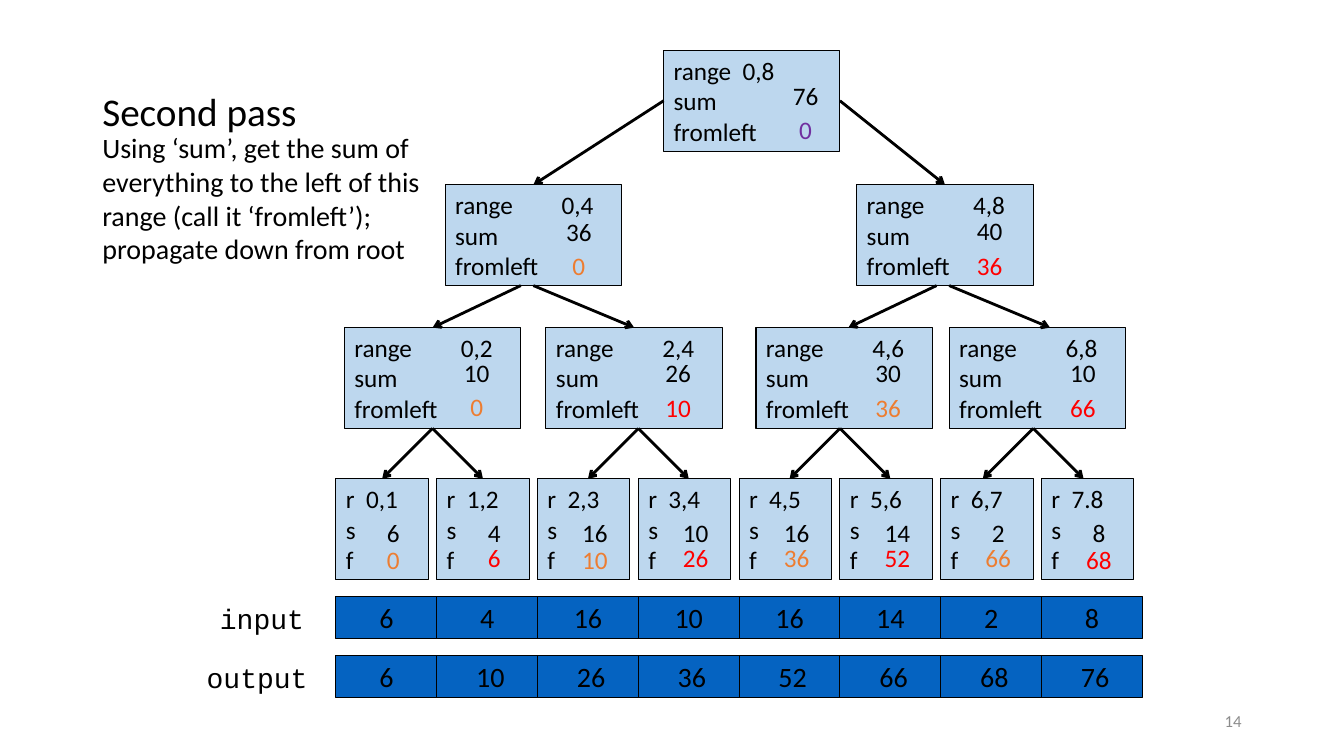
from dataclasses import dataclass

from lxml.etree import SubElement
from pptx import Presentation
from pptx.dml.color import RGBColor
from pptx.enum.shapes import MSO_CONNECTOR, MSO_SHAPE
from pptx.enum.text import MSO_ANCHOR, PP_ALIGN
from pptx.oxml.ns import qn
from pptx.util import Pt

COLORS = {
    "black": "000000", "node": "BDD7EE", "cell": "0563C1", "grey": "8C8C8C",
    "purple": "7030A0", "orange": "ED7D31", "red": "FF0000",
}


@dataclass
class Node:
    left: float
    top: float
    width: float
    lines: tuple[str, str, str]
    value_x: float  # centre of the values, from the left edge
    total: str
    total_top: float
    fromleft: str
    fromleft_top: float
    color: str


@dataclass
class Arrow:
    x1: float
    y1: float
    x2: float
    y2: float


@dataclass
class ArrayRow:
    label: str
    label_left: float
    top: float
    values: list[str]


def rgb(name: str) -> RGBColor:
    return RGBColor.from_string(COLORS[name])


def write(tf, lines, size: float, color: str = "black", font: str = "Calibri",
          align=PP_ALIGN.LEFT, anchor=MSO_ANCHOR.TOP, wrap: bool = False) -> None:
    tf.word_wrap = wrap
    tf.vertical_anchor = anchor
    tf.text = "\n".join(lines)
    for p in tf.paragraphs:
        p.alignment = align
        for r in p.runs:
            r.font.size, r.font.name = Pt(size), font
            r.font.color.rgb = rgb(color)


def add_text(s, left: float, top: float, width: float, height: float,
             text: str, size: float, **style):
    sp = s.shapes.add_textbox(Pt(left), Pt(top), Pt(width), Pt(height))
    write(sp.text_frame, [text], size, **style)
    return sp


def add_box(s, left: float, top: float, width: float, height: float,
            fill: str, lines, size: float, **style) -> None:
    sp = s.shapes.add_shape(MSO_SHAPE.RECTANGLE, Pt(left), Pt(top), Pt(width), Pt(height))
    sp.shadow.inherit = False
    sp.fill.solid()
    sp.fill.fore_color.rgb = rgb(fill)
    sp.line.color.rgb = rgb("black")
    sp.line.width = Pt(0.75)
    write(sp.text_frame, lines, size, **style)


def add_node(s, n: Node) -> None:
    add_box(s, n.left, n.top, n.width, 72, "node", n.lines, 18)
    for text, top, color in ((n.total, n.total_top, "black"),
                             (n.fromleft, n.fromleft_top, n.color)):
        add_text(s, n.left + n.value_x - 18, top, 36, 29, text, 18,
                 color=color, align=PP_ALIGN.CENTER)


def add_arrow(s, a: Arrow) -> None:
    cx = s.shapes.add_connector(MSO_CONNECTOR.STRAIGHT,
                                Pt(a.x1), Pt(a.y1), Pt(a.x2), Pt(a.y2))
    cx.line.color.rgb = rgb("black")
    cx.line.width = Pt(2)
    SubElement(cx.line._get_or_add_ln(), qn("a:tailEnd"), type="arrow")
    SubElement(cx._element.spPr, qn("a:effectLst"))


def add_array(s, row: ArrayRow) -> None:
    add_text(s, row.label_left, row.top, 90, 32, row.label, 20, font="Courier New")
    for i, value in enumerate(row.values):
        add_box(s, 240 + 72 * i, row.top, 72, 30, "cell", [value], 20,
                align=PP_ALIGN.CENTER, anchor=MSO_ANCHOR.MIDDLE)


def inner(left, top, span, value_x, total, total_top, fromleft, fromleft_top, color) -> Node:
    return Node(left, top, 126, (f"range{span}", "sum", "fromleft"), value_x,
                total, total_top, fromleft, fromleft_top, color)


def leaf(i: int, span: str, total: str, fromleft: str, fromleft_top: float) -> Node:
    return Node(240 + 72 * i, 342, 66, (f"r  {span}", "s", "f"), 41, total, 366,
                fromleft, fromleft_top, "red" if i % 2 else "orange")


INNER = [
    inner(474, 36, "  0,8", 101.5, "76", 54, "0", 78, "purple"),
    inner(318, 132, "\t 0,4", 95.5, "36", 151, "0", 175, "orange"),
    inner(612, 132, "\t 4,8", 95, "40", 150, "36", 175, "red"),
    inner(246, 234, "\t 0,2", 94.5, "10", 252, "0", 276, "orange"),
    inner(390, 234, "\t 2,4", 94.5, "26", 252, "10", 277, "red"),
    inner(540, 234, "\t 4,6", 94.5, "30", 252, "36", 277, "orange"),
    inner(678, 234, "\t 6,8", 95.5, "10", 252, "66", 277, "red"),
]
LEAVES = [
    leaf(i, *data) for i, data in enumerate([
        ("0,1", "6", "0", 385), ("1,2", "4", "6", 384),
        ("2,3", "16", "10", 385), ("3,4", "10", "26", 384),
        ("4,5", "16", "36", 384), ("5,6", "14", "52", 384),
        ("6,7", "2", "66", 384), ("7.8", "8", "68", 385),
    ])
]
ARROWS = [
    Arrow(474, 72, 381, 132), Arrow(600, 72, 675, 132),
    Arrow(372, 204, 309, 234), Arrow(381, 204, 453, 234),
    Arrow(669, 204, 606, 234), Arrow(678, 204, 750, 234),
] + [Arrow(x, 306, x + dx, 342) for x in (309, 456, 600, 738) for dx in (-36, 36)]
ARRAYS = [
    ArrayRow("input", 150, 426, ["6", "4", "16", "10", "16", "14", "2", "8"]),
    ArrayRow("output", 140.5, 468,
             ["6", " 10", " 26", " 36", " 52", " 66", " 68", " 76"]),
]


def main() -> None:
    prs = Presentation()
    prs.slide_width, prs.slide_height = Pt(960), Pt(540)
    s = prs.slides.add_slide(prs.slide_layouts[6])

    # Heading and explanation
    title = add_text(s, 66, 28.75, 828, 104.5, "Second pass", 28,
                     anchor=MSO_ANCHOR.MIDDLE, wrap=True)
    title.text_frame.paragraphs[0].line_spacing = 0.9
    add_text(s, 66, 90, 264, 104.5,
             "Using ‘sum’, get the sum of everything to the left of this range "
             "(call it ‘fromleft’); propagate down from root", 20, wrap=True)

    # Input and output arrays
    for row in ARRAYS:
        add_array(s, row)

    # Tree
    for n in INNER + LEAVES:
        add_node(s, n)
    for a in ARROWS:
        add_arrow(s, a)

    # Slide number
    add_text(s, 678, 500.5, 216, 28.75, "14", 12, color="grey",
             align=PP_ALIGN.RIGHT, anchor=MSO_ANCHOR.MIDDLE, wrap=True)

    prs.save("out.pptx")


if __name__ == "__main__":
    main()
